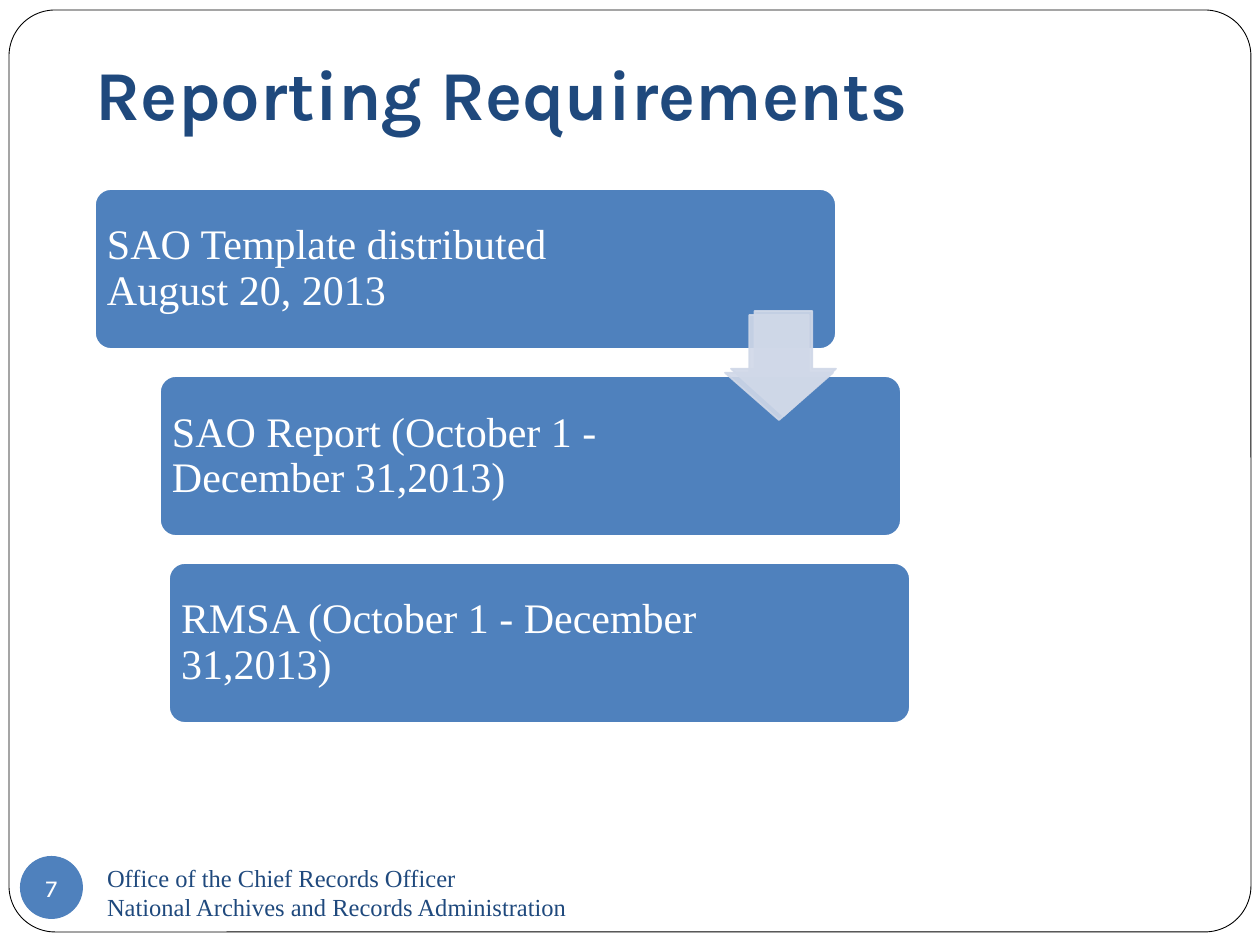
from lxml import etree
from pptx import Presentation, util as u
from pptx.dml.color import RGBColor
from pptx.enum import shapes, text
from pptx.oxml.ns import qn

PX = 914400 / 126
NAVY = RGBColor(0x1F, 0x49, 0x7D)
BLUE = RGBColor(0x4F, 0x81, 0xBD)
PALE = RGBColor(0xD0, 0xD8, 0xE8)
WHITE = RGBColor(0xFF, 0xFF, 0xFF)
BLACK = RGBColor(0, 0, 0)
HEADING = "Karla"
BODY = "Times New Roman"
STEPS = [
    (95, 577, "SAO Template distributed August 20, 2013"),
    (160, 571, "SAO Report (October 1 - December 31,2013)"),
    (169, 571, "RMSA (October 1 - December 31,2013)"),
]


def emu(*lengths):
    return [u.Emu(round(length * PX)) for length in lengths]


def add_shape(page, kind, box, fill, line=None, width=1, adjust=()):
    shape = page.shapes.add_shape(kind, *emu(*box))
    shape.shadow.inherit = False
    shape.fill.solid()
    shape.fill.fore_color.rgb = fill
    if line is None:
        shape.line.fill.background()
    else:
        shape.line.color.rgb = line
        shape.line.width = u.Pt(width)
    for index, value in enumerate(adjust):
        shape.adjustments[index] = value
    return shape


def write(shape, lines, font, size, color, margins, align=text.PP_ALIGN.LEFT,
          anchor=text.MSO_ANCHOR.MIDDLE, wrap=True, bold=False, spacing=None):
    frame = shape.text_frame
    frame.auto_size = text.MSO_AUTO_SIZE.NONE
    frame.word_wrap = wrap
    frame.vertical_anchor = anchor
    (frame.margin_left, frame.margin_top,
     frame.margin_right, frame.margin_bottom) = emu(*margins)
    frame.text = "\n".join(lines)
    for para in frame.paragraphs:
        para.alignment = align
        para.line_spacing = spacing
        para.font.name = font
        para.font.size = u.Pt(size)
        para.font.bold = bold
        para.font.color.rgb = color


def add_title(page, box):
    title = page.shapes.title
    title.left, title.top, title.width, title.height = emu(*box)
    write(title, ["Reporting Requirements"], HEADING, 40, NAVY, (12, 6, 12, 12),
          anchor=text.MSO_ANCHOR.BOTTOM, bold=True)
    title.element.getparent().append(title.element)


def add_footer(page, box):
    left, top, width, height = box
    badge = add_shape(page, shapes.MSO_SHAPE.OVAL, (left, top, 63, 63), BLUE)
    write(badge, ["7"], HEADING, 14, WHITE, (0, 0, 0, 0),
          align=text.PP_ALIGN.CENTER, wrap=False)
    office = page.shapes.add_textbox(*emu(left + 75, top + 5, width - 75, height - 5))
    write(office, ["Office of the Chief Records Officer",
                   "National Archives and Records Administration"],
          BODY, 14, NAVY, (12, 6, 12, 6))


def add_arrow(page, box):
    arrow = add_shape(page, shapes.MSO_SHAPE.DOWN_ARROW, box, PALE, PALE,
                      adjust=(0.55, 0.45))
    for color in arrow.element.spPr.iter(qn("a:srgbClr")):
        etree.SubElement(color, qn("a:alpha"), val="90000")


def add_steps(page, top, width, height, pitch):
    for index, (left, label_width, words) in enumerate(STEPS):
        row = top + index * pitch
        add_shape(page, shapes.MSO_SHAPE.ROUNDED_RECTANGLE,
                  (left, row, width, height), BLUE, WHITE, adjust=(0.1,))
        label = page.shapes.add_textbox(*emu(left, row, label_width, height))
        write(label, [words], BODY, 24, WHITE, (12, 12, 12, 12), spacing=0.9)
    add_arrow(page, (731, top + 122, 105, 105))
    add_arrow(page, (725, top + 126, 108, 105))


def main():
    deck = Presentation()
    deck.slide_width, deck.slide_height = emu(1260, 945)
    page = deck.slides.add_slide(deck.slide_layouts[5])
    add_shape(page, shapes.MSO_SHAPE.ROUNDED_RECTANGLE, (9, 10, 1242, 922),
              WHITE, BLACK, 0.5, adjust=(0.05,))
    add_title(page, (84, -10, 1071, 157))
    add_footer(page, (20, 856, 620, 68))
    add_steps(page, 189, 741, 160, 187)
    deck.save("out.pptx")


if __name__ == "__main__":
    main()
